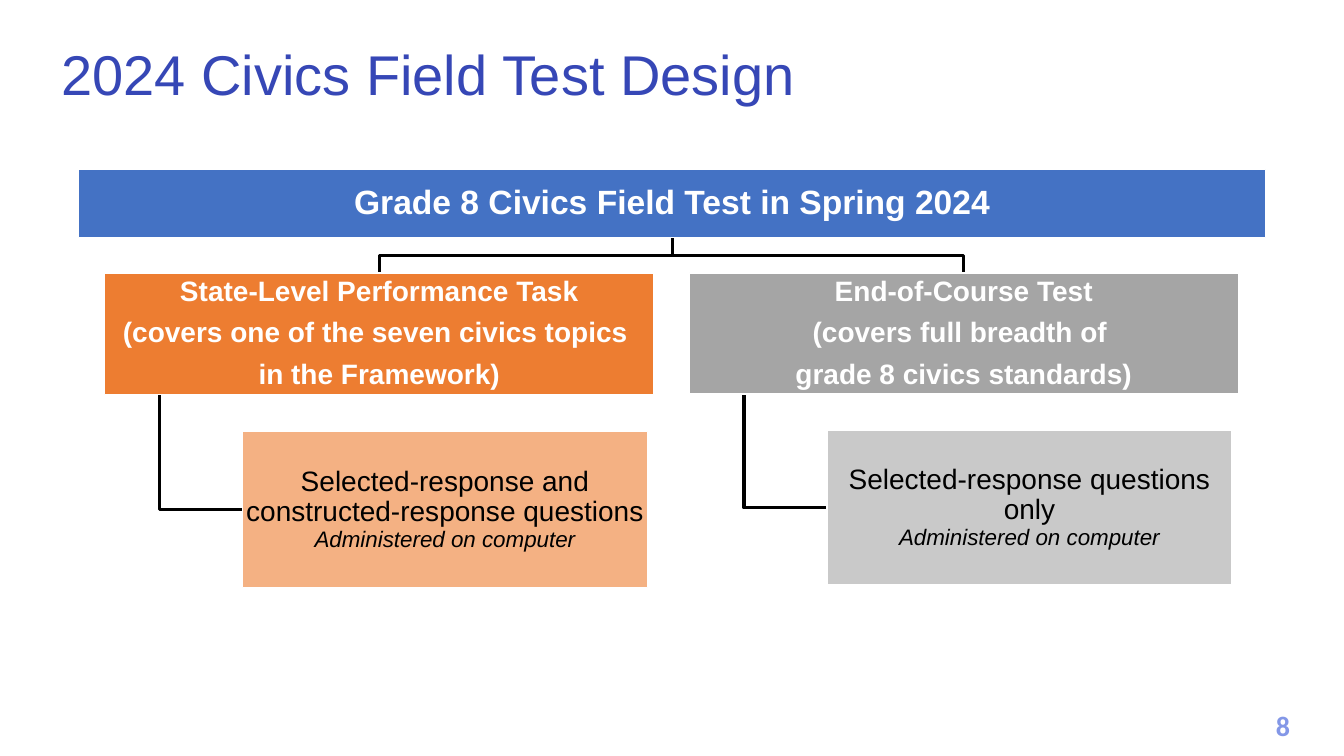
"""Build the slide showing the design of the 2024 civics field test."""
from pptx import Presentation
from pptx import util as u
from pptx.dml import color
from pptx.enum import shapes, text


def rgb(value):
    return color.RGBColor.from_string(value)


def write(shape, paragraphs, size, hue, inset, anchor, font="Arial", bold=False,
          align=text.PP_ALIGN.CENTER, after=0, spacing=0.9):
    frame = shape.text_frame
    frame.word_wrap = True
    frame.vertical_anchor = anchor
    frame.margin_left = frame.margin_right = u.Cm(inset)
    frame.margin_top = frame.margin_bottom = u.Cm(min(inset, 0.13))
    for index, content in enumerate(paragraphs):
        paragraph = frame.paragraphs[0] if index == 0 else frame.add_paragraph()
        paragraph.text = content
        paragraph.alignment = align
        paragraph.line_spacing = spacing
        paragraph.space_after = u.Pt(after)
        paragraph.font.name = font
        paragraph.font.size = u.Pt(size)
        paragraph.font.bold = bold
        paragraph.font.color.rgb = rgb(hue)
    return frame


presentation = Presentation()
presentation.slide_width = u.Cm(33.87)
presentation.slide_height = u.Cm(19.05)
slide = presentation.slides.add_slide(presentation.slide_layouts[6])

number = slide.shapes.add_textbox(u.Cm(31.55), u.Cm(17.73), u.Cm(1.57), u.Cm(1.12))
write(number, ["8"], 20, "8397E7", 0.25, text.MSO_ANCHOR.TOP,
      font="Calibri", bold=True, spacing=1.0)

title = slide.shapes.add_textbox(u.Cm(1.3), u.Cm(0.61), u.Cm(30.53), u.Cm(2.24))
write(title, ["2024 Civics Field Test Design"], 40, "3647B6", 0.25,
      text.MSO_ANCHOR.BOTTOM, align=text.PP_ALIGN.LEFT)

root_left, root_top, root_width, root_height = 1.98, 4.27, 29.92, 1.72
branch_top, branch_width = 6.88, 13.84
leaf_indent, leaf_gap, leaf_width = 3.47, 0.92, 10.21
elbow_indent = 1.38

branches = [
    (2.64, 3.07, 3.94, "ED7D31", "F4B183",
     ["State-Level Performance Task",
      "(covers one of the seven civics topics ",
      "in the Framework)"],
     "Selected-response and constructed-response questions "),
    (17.37, 3.05, 3.89, "A5A5A5", "C9C9C9",
     ["End-of-Course Test",
      "(covers full breadth of ",
      "grade 8 civics standards)"],
     "Selected-response questions only\v"),
]

root_middle = root_left + root_width / 2
root_bottom = root_top + root_height
fork = (root_bottom + branch_top) / 2
lines = []
boxes = [(root_left, root_top, root_width, root_height, "4472C4",
          ["Grade 8 Civics Field Test in Spring 2024"], 24, "FFFFFF", True, 9.5, None)]
for left, height, leaf_height, fill, leaf_fill, heading, questions in branches:
    middle = left + branch_width / 2
    leaf_left = left + leaf_indent
    leaf_top = branch_top + height + leaf_gap
    leaf_middle = leaf_top + leaf_height / 2
    elbow = left + elbow_indent
    lines.append([(root_middle, root_bottom), (root_middle, fork),
                  (middle, fork), (middle, branch_top)])
    lines.append([(elbow, branch_top + height), (elbow, leaf_middle),
                  (leaf_left, leaf_middle)])
    boxes.append((left, branch_top, branch_width, height, fill,
                  heading, 20, "FFFFFF", True, 8, None))
    boxes.append((leaf_left, leaf_top, leaf_width, leaf_height, leaf_fill,
                  [questions], 20, "000000", False, 8, "Administered on computer"))

for points in lines:
    start, *rest = [(u.Cm(x), u.Cm(y)) for x, y in points]
    builder = slide.shapes.build_freeform(*start)
    builder.add_line_segments(rest, close=False)
    line = builder.convert_to_shape()
    line.shadow.inherit = False
    line.fill.background()
    line.line.color.rgb = rgb("000000")
    line.line.width = u.Pt(2.25)

for left, top, width, height, fill, content, size, hue, bold, after, note in boxes:
    box = slide.shapes.add_shape(shapes.MSO_SHAPE.RECTANGLE,
                                 u.Cm(left), u.Cm(top), u.Cm(width), u.Cm(height))
    box.shadow.inherit = False
    box.fill.solid()
    box.fill.fore_color.rgb = rgb(fill)
    box.line.color.rgb = rgb("FFFFFF")
    box.line.width = u.Pt(1)
    frame = write(box, content, size, hue, 0.03, text.MSO_ANCHOR.MIDDLE,
                  bold=bold, after=after)
    if note:
        run = frame.paragraphs[0].add_run()
        run.text = note
        run.font.size = u.Pt(16)
        run.font.italic = True
        for part in frame.paragraphs[0].runs:
            part.font.name = "Arial"
            part.font.color.rgb = rgb(hue)

presentation.save("out.pptx")
